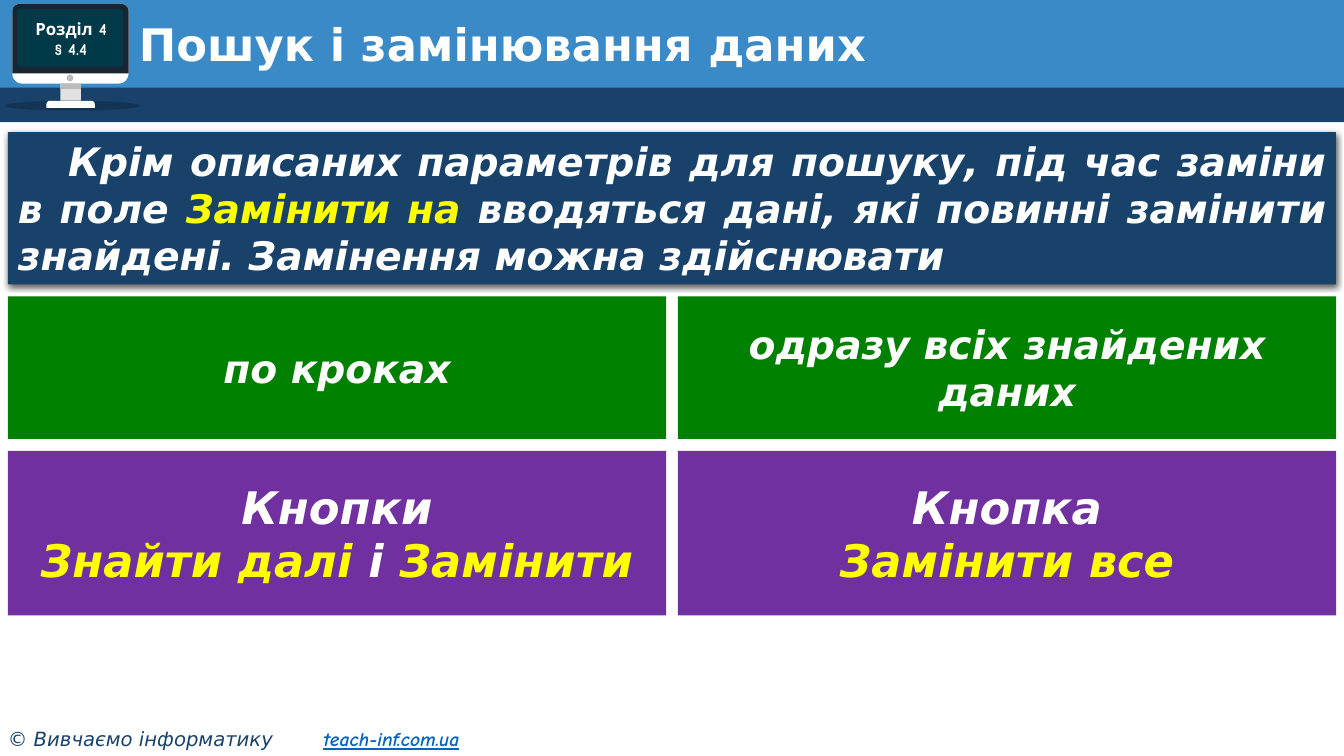
from lxml import etree
from pptx import Presentation
from pptx.dml.color import RGBColor
from pptx.enum.shapes import MSO_SHAPE
from pptx.enum.text import MSO_ANCHOR, PP_ALIGN
from pptx.oxml import parse_xml
from pptx.oxml.ns import nsdecls, qn
from pptx.util import Cm, Pt

RECT, OVAL = MSO_SHAPE.RECTANGLE, MSO_SHAPE.OVAL
ROUND, CAP = MSO_SHAPE.ROUNDED_RECTANGLE, MSO_SHAPE.ROUND_2_SAME_RECTANGLE
TOP, MID = MSO_ANCHOR.TOP, MSO_ANCHOR.MIDDLE
LEFT, CENTER, JUST = PP_ALIGN.LEFT, PP_ALIGN.CENTER, PP_ALIGN.JUSTIFY

WHITE = RGBColor(0xFF, 0xFF, 0xFF)
BLACK = RGBColor(0, 0, 0)
YELLOW = RGBColor(0xFF, 0xFF, 0)
BLUE = RGBColor(0x39, 0x8A, 0xC7)
NAVY = RGBColor(0x19, 0x42, 0x6B)
GREEN = RGBColor(0, 0x80, 0)
PURPLE = RGBColor(0x70, 0x30, 0xA0)
FRAME = RGBColor(0x18, 0x26, 0x32)
SCREEN = RGBColor(0, 0x39, 0x48)
PALE = RGBColor(0xE1, 0xE1, 0xE1)
GRAY = RGBColor(0xBB, 0xBB, 0xBB)
LINK = RGBColor(0x05, 0x63, 0xC1)
SANS, COMIC = "DejaVu Sans", "Comic Neue"

# Content: each paragraph is a list of (text, colour)
TITLE = [[("Пошук і замінювання даних", WHITE)]]
BADGE = [[("Розділ 4", WHITE)], [("§ 4.4", WHITE)]]
INTRO = [[
    ("Крім описаних параметрів для пошуку, під час заміни в поле ", WHITE),
    ("Замінити на ", YELLOW),
    ("вводяться дані, які повинні замінити знайдені. "
     "Замінення можна здійснювати", WHITE)]]
WAYS = [[[("по кроках", WHITE)]],
        [[("одразу всіх знайдених даних", WHITE)]]]
BUTTONS = [[[("Кнопки", WHITE)],
            [("Знайти далі", YELLOW), (" і ", WHITE), ("Замінити", YELLOW)]],
           [[("Кнопка", WHITE)], [("Замінити все", YELLOW)]]]
OWNER, SITE = "© Вивчаємо інформатику", "teach-inf.com.ua"

# Header bands and monitor: kind, left, top, width, height, fill, corners
WIDE, HIGH = 33.87, 19.05
HEADER = [
    (RECT, 0, 0, WIDE, 2.3, BLUE, ()),
    (RECT, 0, 2.21, WIDE, 0.87, NAVY, ()),
    (OVAL, 0.13, 2.54, 3.4, 0.25, BLACK, ()),
    (CAP, 0.31, 0.1, 2.93, 2.01, WHITE, (0.09, 0.13)),
    (CAP, 0.31, 0.1, 2.93, 1.75, FRAME, (0.1, 0)),
    (RECT, 1.52, 2.11, 0.52, 0.43, PALE, ()),
    (RECT, 1.52, 2.11, 0.52, 0.14, GRAY, ()),
    (CAP, 1.17, 2.54, 1.22, 0.18, WHITE, (0.5, 0)),
    (OVAL, 1.68, 1.88, 0.17, 0.17, GRAY, ()),
    (ROUND, 0.43, 0.23, 2.67, 1.45, SCREEN, (0.04,)),
]

# Grid of answer boxes: rows of (content, height, fill, size)
EDGE, GAP, START = 0.2, 0.3, 7.47
ROWS = [(WAYS, 3.59, GREEN, 28), (BUTTONS, 4.15, PURPLE, 32)]

deck = Presentation()
deck.slide_width, deck.slide_height = Cm(WIDE), Cm(HIGH)
slide = deck.slides.add_slide(deck.slide_layouts[6])
shapes = slide.shapes


def draw(kind, x, y, w, h, fill, turns=()):
    box = shapes.add_shape(kind, Cm(x), Cm(y), Cm(w), Cm(h))
    box.shadow.inherit = False
    box.fill.solid()
    box.fill.fore_color.rgb = fill
    box.line.fill.background()
    for i, turn in enumerate(turns):
        box.adjustments[i] = turn
    return box


def label(x, y, w, h):
    return shapes.add_textbox(Cm(x), Cm(y), Cm(w), Cm(h))


def write(box, paras, size, font=SANS, align=CENTER, anchor=MID, italic=True):
    frame = box.text_frame
    frame.word_wrap = True
    frame.vertical_anchor = anchor
    for i, runs in enumerate(paras):
        para = frame.add_paragraph() if i else frame.paragraphs[0]
        para.alignment = align
        para.font.name, para.font.size = font, Pt(size)
        para.font.bold, para.font.italic = True, italic
        for text, color in runs:
            run = para.add_run()
            run.text = text
            run.font.color.rgb = color
    return frame.paragraphs[0]


def fade(box, percent):
    """Make the solid fill of a shape partly transparent."""
    color = box.fill._xPr.find(qn("a:solidFill"))[0]
    etree.SubElement(color, qn("a:alpha"), val=str(percent * 1000))


def shade(box):
    """Give a shape a soft shadow that falls straight down."""
    box._element.spPr.find(qn("a:effectLst")).append(parse_xml(
        f'<a:outerShdw {nsdecls("a")} blurRad="{Pt(4.5)}" dist="{Pt(1.5)}" '
        'dir="5400000" algn="ctr" rotWithShape="0"><a:srgbClr val="000000">'
        '<a:alpha val="63000"/></a:srgbClr></a:outerShdw>'))


for part in HEADER:
    shape = draw(*part)
    if part[5] == BLACK:
        fade(shape, 20)

write(label(0.33, 0.23, 2.92, 1.5), BADGE, 12, COMIC, italic=False)
head = write(label(3.25, 0.46, 29.77, 1.47), TITLE, 32, align=LEFT, italic=False)
head.line_spacing = 0.9

intro = draw(RECT, EDGE, 3.33, WIDE - 2 * EDGE, 3.84, NAVY)
shade(intro)
lead = write(intro, INTRO, 28, align=JUST, anchor=TOP)
lead._p.get_or_add_pPr().set("indent", str(Cm(1.27)))

wide = (WIDE - 2 * EDGE - GAP) / 2
y = START
for cells, high, fill, size in ROWS:
    for col, paras in enumerate(cells):
        write(draw(RECT, EDGE + col * (wide + GAP), y, wide, high, fill), paras, size)
    y += high + GAP

foot = label(0, 18.19, 13.24, 0.86)
foot.text_frame.margin_left = Cm(0.2)
line = foot.text_frame.paragraphs[0]
tabs = etree.SubElement(line._p.get_or_add_pPr(), qn("a:tabLst"))
etree.SubElement(tabs, qn("a:tab"), pos=str(Cm(7.95)), algn="l")
line.font.size, line.font.italic = Pt(14), True
for text, font, color, link in [(OWNER + "\t", SANS, NAVY, False),
                                (SITE, COMIC, LINK, True)]:
    run = line.add_run()
    run.text = text
    run.font.name, run.font.color.rgb = font, color
    run.font.bold = run.font.underline = link

deck.save("out.pptx")
